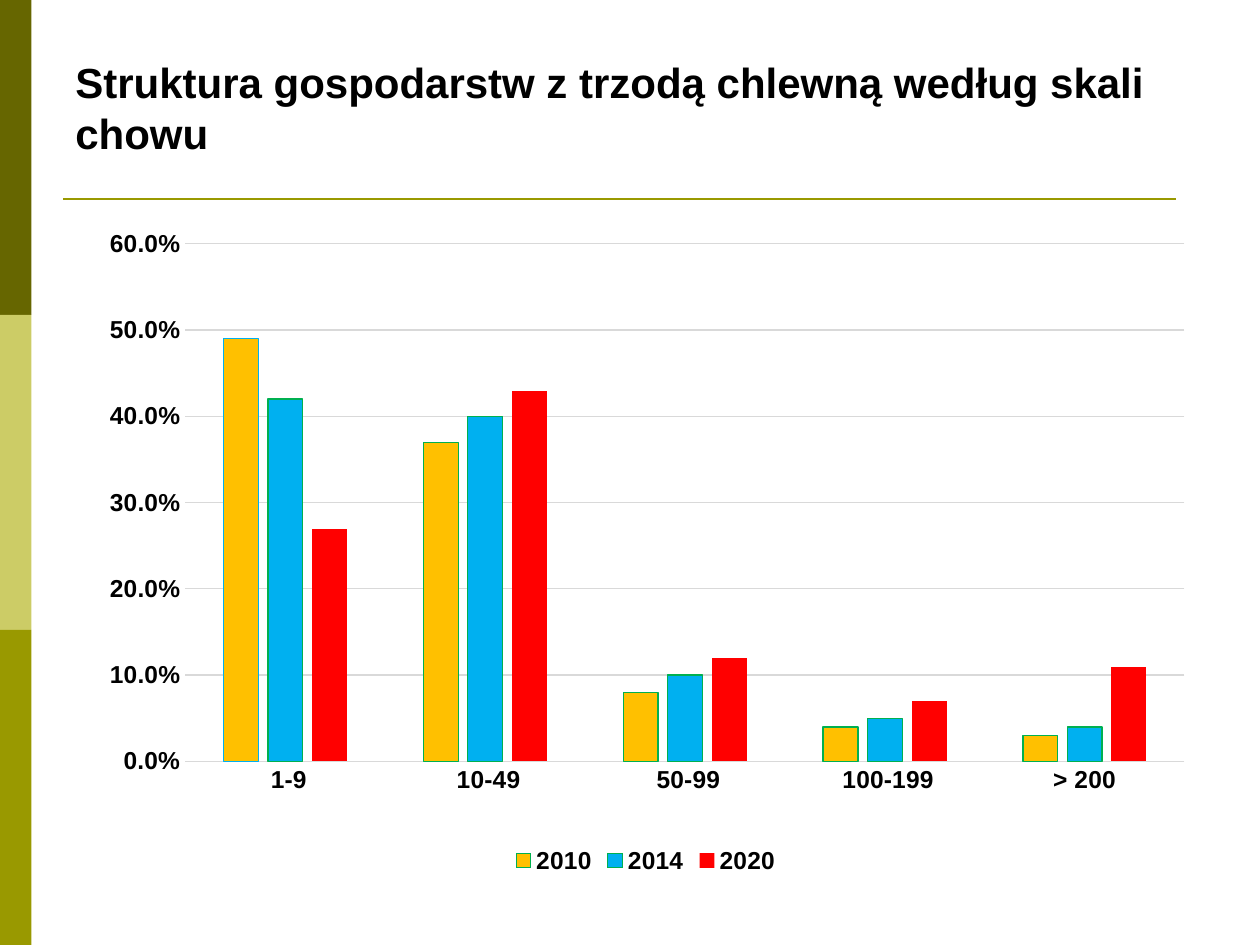
from lxml import etree
from pptx import Presentation
from pptx.chart.data import CategoryChartData
from pptx.dml.color import RGBColor
from pptx.enum.chart import XL_CHART_TYPE as ChartType
from pptx.enum.chart import XL_LEGEND_POSITION as LegendPosition
from pptx.enum.chart import XL_TICK_MARK as TickMark
from pptx.enum.shapes import MSO_CONNECTOR as Connector
from pptx.enum.shapes import MSO_SHAPE as Shape
from pptx.enum.text import MSO_ANCHOR as Anchor
from pptx.oxml.ns import qn
from pptx.util import Inches, Pt

FONT = "Arial"
BLACK = RGBColor(0x00, 0x00, 0x00)
DARK_OLIVE = RGBColor(0x66, 0x66, 0x00)
LIGHT_OLIVE = RGBColor(0xCC, 0xCC, 0x66)
OLIVE = RGBColor(0x99, 0x99, 0x00)
GRID_GRAY = RGBColor(0xD9, 0xD9, 0xD9)
AMBER = RGBColor(0xFF, 0xC0, 0x00)
BLUE = RGBColor(0x00, 0xB0, 0xF0)
RED = RGBColor(0xFF, 0x00, 0x00)
GREEN = RGBColor(0x00, 0xB0, 0x50)

HERD_SIZES = [" 1-9", " 10-49", " 50-99", " 100-199", " > 200 "]
# year, shares of farms, fill, outline
YEARS = [
    ("2010", [0.49, 0.37, 0.08, 0.04, 0.03], AMBER, GREEN),
    ("2014", [0.42, 0.40, 0.10, 0.05, 0.04], BLUE, GREEN),
    ("2020", [0.27, 0.43, 0.12, 0.07, 0.11], RED, None),
]


def style_font(font, size, bold=True, color=BLACK):
    font.name = FONT
    font.size = Pt(size)
    font.bold = bold
    font.color.rgb = color


def style_line(line, color, width=0.75):
    line.color.rgb = color
    line.width = Pt(width)


def add_text(slide, text, left, top, width, height, size=24, anchor=Anchor.BOTTOM):
    box = slide.shapes.add_textbox(
        Inches(left), Inches(top), Inches(width), Inches(height))
    frame = box.text_frame
    frame.word_wrap = True
    frame.vertical_anchor = anchor
    run = frame.paragraphs[0].add_run()
    run.text = text
    style_font(run.font, size)


def add_side_band(slide, top, color):
    band = slide.shapes.add_shape(
        Shape.RECTANGLE, 0, Inches(top), Inches(0.25), Inches(2.5))
    band.shadow.inherit = False
    band.fill.solid()
    band.fill.fore_color.rgb = color
    band.line.fill.background()


def add_rule(slide, left, right, y):
    rule = slide.shapes.add_connector(
        Connector.STRAIGHT, Inches(left), Inches(y), Inches(right), Inches(y))
    style_line(rule.line, OLIVE, 1.5)
    etree.SubElement(rule._element.spPr, qn("a:effectLst"))


def set_plot_layout(chart, x, y, w, h):
    """Fix the inner plot area, in fractions of the chart."""
    plot_area = chart._chartSpace.chart.plotArea
    for old in plot_area.findall(qn("c:layout")):
        plot_area.remove(old)
    layout = etree.Element(qn("c:layout"))
    manual = etree.SubElement(layout, qn("c:manualLayout"))
    settings = [("layoutTarget", "inner"), ("xMode", "edge"), ("yMode", "edge"),
                ("x", x), ("y", y), ("w", w), ("h", h)]
    for tag, value in settings:
        etree.SubElement(manual, qn(f"c:{tag}")).set("val", str(value))
    plot_area.insert(0, layout)


def style_axes(chart):
    for axis in (chart.category_axis, chart.value_axis):
        axis.major_tick_mark = axis.minor_tick_mark = TickMark.NONE
        style_font(axis.tick_labels.font, 14)
    style_line(chart.category_axis.format.line, GRID_GRAY)

    shares = chart.value_axis
    shares.minimum_scale, shares.maximum_scale, shares.major_unit = 0, 0.6, 0.1
    shares.format.line.fill.background()
    shares.has_major_gridlines = True
    style_line(shares.major_gridlines.format.line, GRID_GRAY)
    shares.tick_labels.number_format = "0.0%"
    shares.tick_labels.number_format_is_linked = False


def add_farm_chart(slide, left, top, width, height):
    farm_data = CategoryChartData(number_format="0.0%")
    farm_data.categories = HERD_SIZES
    for year, shares, _, _ in YEARS:
        farm_data.add_series(year, shares)
    chart = slide.shapes.add_chart(
        ChartType.COLUMN_CLUSTERED, Inches(left), Inches(top),
        Inches(width), Inches(height), farm_data).chart
    chart.has_title = False
    style_font(chart.font, 14)
    set_plot_layout(chart, 0.09, 0.03, 0.89, 0.79)
    style_axes(chart)

    plot = chart.plots[0]
    plot.gap_width = 219
    plot.overlap = -27
    plot.vary_by_categories = False
    for series, (_, _, fill, outline) in zip(plot.series, YEARS):
        series.format.fill.solid()
        series.format.fill.fore_color.rgb = fill
        if outline is None:
            series.format.line.fill.background()
        else:
            style_line(series.format.line, outline)

    first_bar = plot.series[0].points[0].format
    first_bar.fill.solid()
    first_bar.fill.fore_color.rgb = AMBER
    style_line(first_bar.line, BLUE)

    chart.has_legend = True
    chart.legend.position = LegendPosition.BOTTOM
    chart.legend.include_in_layout = False
    style_font(chart.legend.font, 14)


def main():
    deck = Presentation()
    deck.slide_width, deck.slide_height = Inches(10), Inches(7.5)
    slide = deck.slides.add_slide(deck.slide_layouts[6])
    for index, color in enumerate((DARK_OLIVE, LIGHT_OLIVE, OLIVE)):
        add_side_band(slide, index * 2.5, color)
    add_rule(slide, 0.5, 9.33, 1.58)
    add_text(slide, "Struktura gospodarstw z trzodą chlewną według skali chowu",
             0.5, 0.3, 9, 1)
    add_farm_chart(slide, 0.67, 1.78, 8.91, 5.2)
    deck.save("out.pptx")


if __name__ == "__main__":
    main()
